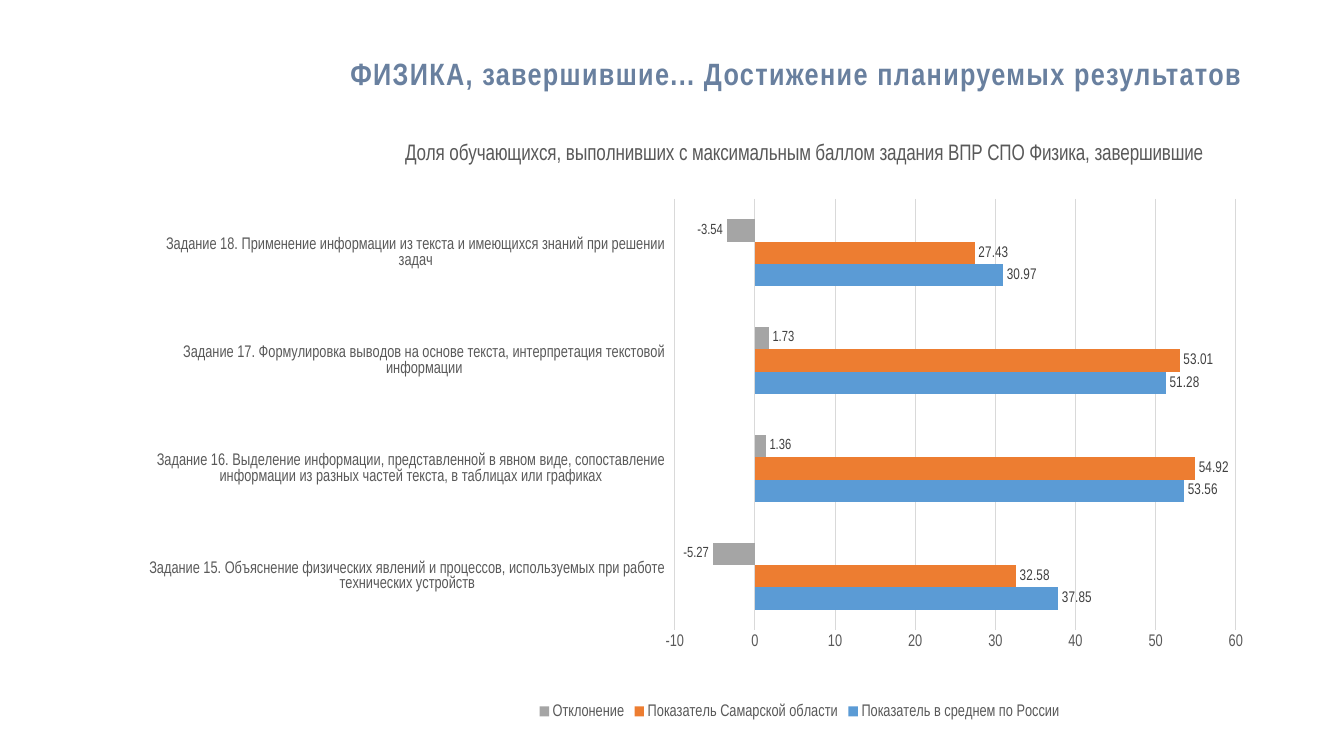
"""Build a slide with a bar chart of physics test results."""
import pptx
import pptx.chart.data
import pptx.dml.color
import pptx.enum.chart
import pptx.enum.text
import pptx.oxml
import pptx.oxml.ns
import pptx.util

Inches, Pt = pptx.util.Inches, pptx.util.Pt
qn = pptx.oxml.ns.qn
enum = pptx.enum.chart

FACE = "Arial Narrow"
HEAD = "ФИЗИКА, завершившие... Достижение планируемых результатов"
TITLE = "Доля обучающихся, выполнивших с максимальным баллом задания ВПР СПО Физика, завершившие"
TASKS = [
    "Задание 15. Объяснение физических явлений и процессов, используемых при работе технических устройств",
    "Задание 16. Выделение информации, представленной в явном виде, сопоставление информации из разных частей текста, в таблицах или графиках",
    "Задание 17. Формулировка выводов на основе текста, интерпретация текстовой информации",
    "Задание 18. Применение информации из текста и имеющихся знаний при решении задач",
]
SERIES = [
    ("Показатель в среднем по России", (37.85, 53.56, 51.28, 30.97), "5B9BD5", 11),
    ("Показатель Самарской области", (32.58, 54.92, 53.01, 27.43), "ED7D31", 11),
    ("Отклонение", (-5.27, 1.36, 1.73, -3.54), "A5A5A5", 10.5),
]
GREY, PALE = "595959", "D9D9D9"


def tint(text):
    return pptx.dml.color.RGBColor.from_string(text)


def style(font, size, color, bold=False):
    font.name, font.size, font.bold = FACE, Pt(size), bold
    font.color.rgb = tint(color)


def rule(line):
    line.color.rgb = tint(PALE)
    line.width = Pt(0.75)


def place(part, index, inner=False, **spot):
    for old in part.findall(qn("c:layout")):
        part.remove(old)
    rows = [("layoutTarget", "inner")] if inner else []
    rows += [("xMode", "edge"), ("yMode", "edge"), *spot.items()]
    body = "".join(f'<c:{tag} val="{val}"/>' for tag, val in rows)
    space = pptx.oxml.ns.nsdecls("c")
    part.insert(index, pptx.oxml.parse_xml(
        f"<c:layout {space}><c:manualLayout>{body}</c:manualLayout></c:layout>"))


def add_head(slide):
    box = slide.shapes.add_textbox(Inches(0.92), Inches(0.4), Inches(11.5), Inches(0.7))
    frame = box.text_frame
    frame.word_wrap = True
    frame.vertical_anchor = pptx.enum.text.MSO_ANCHOR.MIDDLE
    para = frame.paragraphs[0]
    para.alignment = pptx.enum.text.PP_ALIGN.RIGHT
    para.line_spacing = 0.9
    run = para.add_run()
    run.text = HEAD
    style(para.font, 22, "69809F", True)
    run.font._element.set("spc", "100")


def add_bars(slide):
    data = pptx.chart.data.CategoryChartData()
    data.categories = TASKS
    for name, vals, _, _ in SERIES:
        data.add_series(name, vals)
    chart = slide.shapes.add_chart(
        enum.XL_CHART_TYPE.BAR_CLUSTERED, Inches(1.48), Inches(1.19),
        Inches(10.93), Inches(5.99), data).chart
    style(chart.font, 10, "000000")

    chart.has_title = True
    para = chart.chart_title.text_frame.paragraphs[0]
    para.text = TITLE
    style(para.font, 16, GREY)
    place(chart.chart_title._element, 1, x=0.17, y=0.03)

    plot = chart.plots[0]
    plot.gap_width, plot.overlap = 182, 0
    plot.vary_by_categories = False
    for bars, (_, _, color, size) in zip(plot.series, SERIES):
        bars.invert_if_negative = False
        bars.format.fill.solid()
        bars.format.fill.fore_color.rgb = tint(color)
        labels = bars.data_labels
        labels.show_value = True
        labels.position = enum.XL_LABEL_POSITION.OUTSIDE_END
        style(labels.font, size, "404040")
    area = chart._chartSpace.find(".//" + qn("c:plotArea"))
    place(area, 0, True, x=0.437, y=0.131, w=0.548, h=0.714)

    cats, vals = chart.category_axis, chart.value_axis
    for axis in (cats, vals):
        axis.major_tick_mark = axis.minor_tick_mark = enum.XL_TICK_MARK.NONE
        style(axis.tick_labels.font, 12, GREY)
    cats.tick_label_position = enum.XL_TICK_LABEL_POSITION.LOW
    rule(cats.format.line)
    vals.minimum_scale, vals.maximum_scale, vals.major_unit = -10, 60, 10
    vals.format.line.fill.background()
    rule(vals.major_gridlines.format.line)

    chart.has_legend = True
    key = chart.legend
    key.position = enum.XL_LEGEND_POSITION.BOTTOM
    key.include_in_layout = False
    style(key.font, 12, GREY)
    place(key._element, 1, x=0.3, y=0.96)


def main():
    deck = pptx.Presentation()
    deck.slide_width, deck.slide_height = Inches(13.33), Inches(7.5)
    slide = deck.slides.add_slide(deck.slide_layouts[6])
    add_bars(slide)
    add_head(slide)
    deck.save("out.pptx")


if __name__ == "__main__":
    main()
